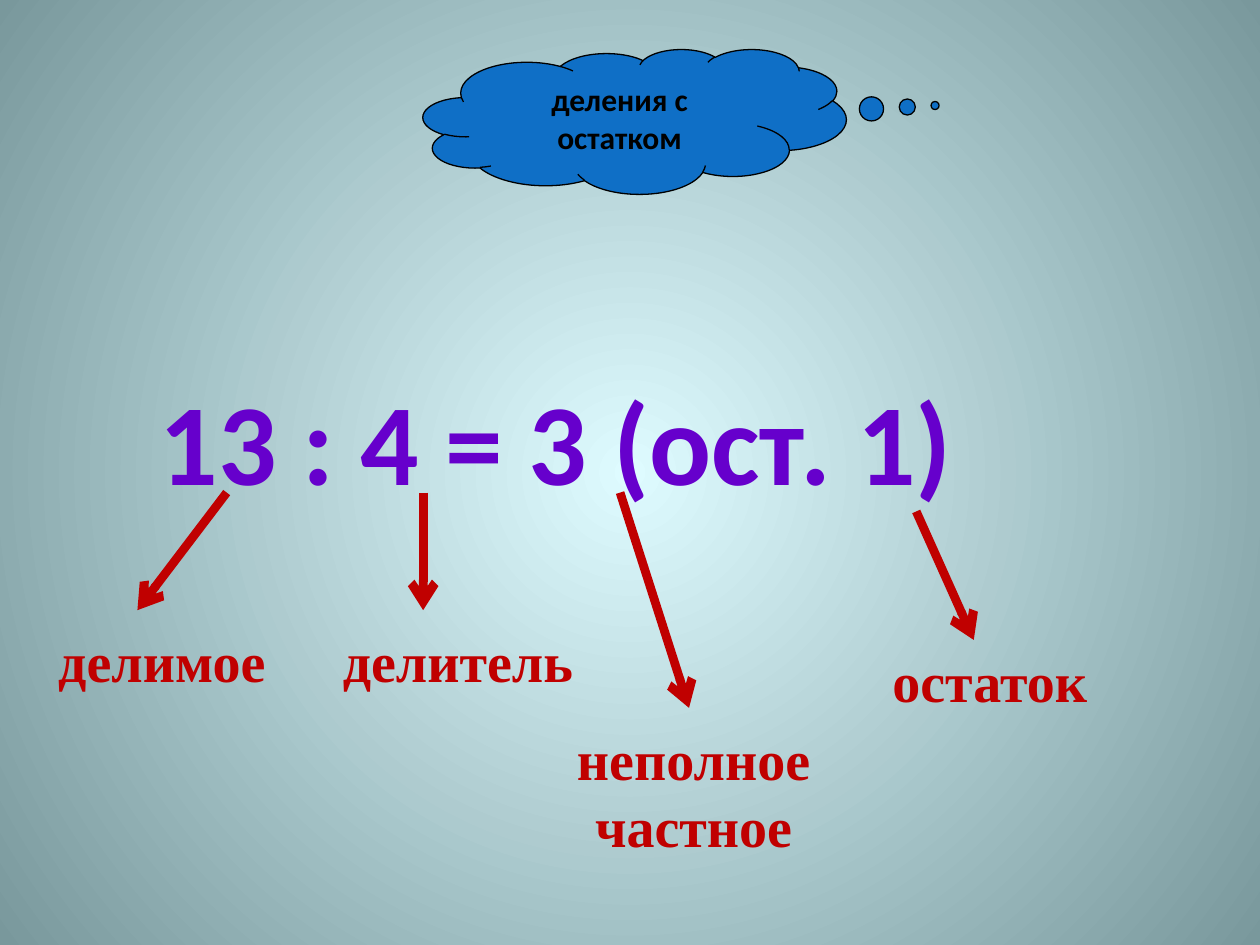
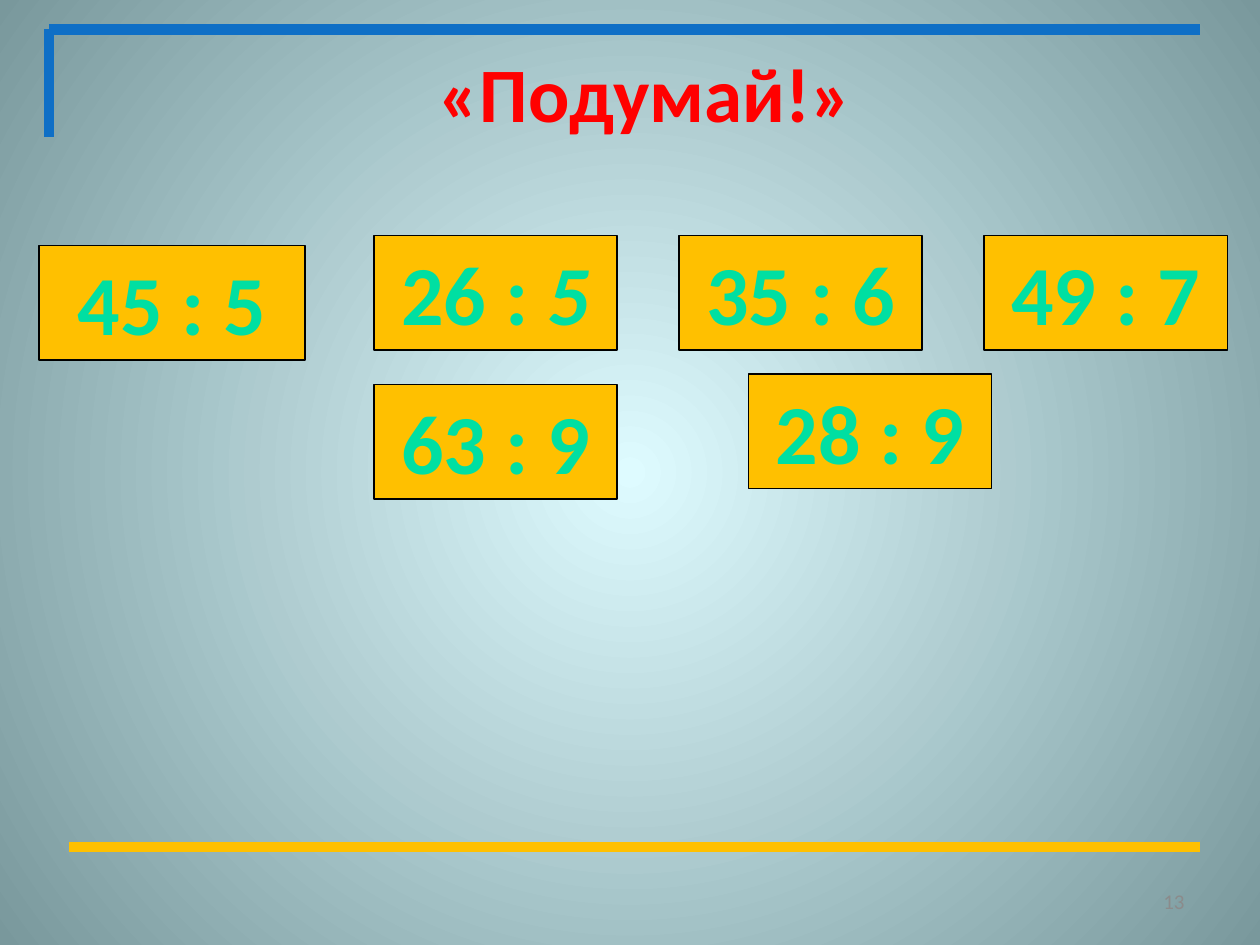
from dataclasses import dataclass
from typing import Any

from lxml import etree
from pptx import Presentation
from pptx.dml.color import RGBColor
from pptx.enum.shapes import MSO_CONNECTOR, MSO_SHAPE
from pptx.enum.text import MSO_ANCHOR, MSO_AUTO_SIZE, PP_ALIGN
from pptx.oxml import parse_xml
from pptx.oxml.ns import nsdecls, qn
from pptx.util import Cm, Pt

STRAIGHT = MSO_CONNECTOR.STRAIGHT
CLOUD = MSO_SHAPE.CLOUD_CALLOUT
RECTANGLE = MSO_SHAPE.RECTANGLE
LEFT, CENTER, RIGHT = PP_ALIGN.LEFT, PP_ALIGN.CENTER, PP_ALIGN.RIGHT
TOP, MIDDLE = MSO_ANCHOR.TOP, MSO_ANCHOR.MIDDLE
GROW, FIXED = MSO_AUTO_SIZE.SHAPE_TO_FIT_TEXT, MSO_AUTO_SIZE.NONE
TITLE_ONLY_LAYOUT, BLANK_LAYOUT = 5, 6


@dataclass(frozen=True)
class TextStyle:
    size: float
    color: str
    name: str = "Calibri"
    bold: bool = True


@dataclass(frozen=True)
class Theme:
    glow: str = "DEFBFF"
    edge: str = "79989C"
    blue: str = "0F6FC6"
    amber: str = "FFC000"
    red: str = "C00000"
    outline: str = "000000"
    outline_width: float = 0.75
    arrow_width: float = 5
    bar_width: float = 6
    digit_outline: str = "00A578"
    digit_outline_width: float = 0.71
    digit_stops: tuple[tuple[int, str], ...] = (
        (0, "006F51"), (43, "00DFA2"), (48, "00D097"), (100, "006F51"))
    formula: TextStyle = TextStyle(66, "6600CC")
    cloud: TextStyle = TextStyle(18, "000000")
    term: TextStyle = TextStyle(32, "C00000", "Times New Roman")
    title: TextStyle = TextStyle(44, "FF0000")
    digits: TextStyle = TextStyle(48, "00DFA2")
    number: TextStyle = TextStyle(12, "8B8B8B", bold=False)


@dataclass(frozen=True)
class Box:
    left: float
    top: float
    width: float
    height: float

    def lengths(self) -> tuple[Cm, Cm, Cm, Cm]:
        return Cm(self.left), Cm(self.top), Cm(self.width), Cm(self.height)


@dataclass(frozen=True)
class Line:
    start: tuple[float, float]
    end: tuple[float, float]
    color: str
    width: float
    arrow: bool = False


@dataclass(frozen=True)
class Term:
    text: str
    box: Box
    start: tuple[float, float]
    end: tuple[float, float]


@dataclass(frozen=True)
class Card:
    dividend: str
    divisor: str
    left: float
    top: float
    width: float = 4.9
    wrap: bool = False
    italic_divisor: bool = False


THEME = Theme()
CARD_HEIGHT = 2.31
ROW_LEFT, ROW_TOP, ROW_STEP = 7.54, 4.75, 6.15

TERMS = (
    Term("неполное частное", Box(10.11, 14.48, 7.75, 3), (12.5, 9.93), (13.89, 14.27)),
    Term("остаток", Box(17.48, 12.9, 4.95, 1.63), (18.47, 10.31), (19.63, 12.9)),
    Term("делимое", Box(0.79, 12.5, 4.95, 1.63), (4.57, 9.93), (2.77, 12.3)),
    Term("делитель", Box(6.35, 12.5, 5.77, 1.63), (8.53, 9.93), (8.53, 12.3)),
)
BARS = (
    Line((0.99, 0.59), (24.2, 0.59), THEME.blue, THEME.bar_width),
    Line((0.99, 0.59), (0.99, 2.77), THEME.blue, THEME.bar_width),
    Line((1.4, 17.07), (24.2, 17.07), THEME.amber, THEME.bar_width),
)
CARDS = (
    Card("45", "5", 0.79, 4.95, 5.36, wrap=True),
    Card("63", "9", ROW_LEFT, 7.75),
    Card("28", "9", 15.09, 7.54),
    Card("26", "5", ROW_LEFT, ROW_TOP, italic_divisor=True),
    Card("35", "6", ROW_LEFT + ROW_STEP, ROW_TOP),
    Card("49", "7", ROW_LEFT + 2 * ROW_STEP, ROW_TOP),
)


def apply_format(target: Any, values: dict[str, Any]) -> None:
    for name, value in values.items():
        setattr(target, name, value)


def style_font(font: Any, style: TextStyle) -> None:
    apply_format(font, {"name": style.name, "size": Pt(style.size), "bold": style.bold})
    font.color.rgb = RGBColor.from_string(style.color)


def write_text(shape: Any, text: str, style: TextStyle, alignment: Any = CENTER,
               anchor: Any = TOP, auto_size: Any = GROW) -> None:
    frame = shape.text_frame
    apply_format(frame, {"word_wrap": True, "auto_size": auto_size,
                         "vertical_anchor": anchor})
    paragraph = frame.paragraphs[0]
    paragraph.alignment = alignment
    run = paragraph.add_run()
    run.text = text
    style_font(run.font, style)


def add_text(slide: Any, text: str, box: Box, style: TextStyle, **options: Any) -> None:
    write_text(slide.shapes.add_textbox(*box.lengths()), text, style, **options)


def add_outlined_shape(slide: Any, kind: Any, box: Box, fill: str) -> Any:
    shape = slide.shapes.add_shape(kind, *box.lengths())
    shape.shadow.inherit = False
    shape.fill.solid()
    shape.fill.fore_color.rgb = RGBColor.from_string(fill)
    shape.line.color.rgb = RGBColor.from_string(THEME.outline)
    shape.line.width = Pt(THEME.outline_width)
    return shape


def add_line(slide: Any, line: Line) -> None:
    points = [Cm(value) for value in (*line.start, *line.end)]
    connector = slide.shapes.add_connector(STRAIGHT, *points)
    connector.line.color.rgb = RGBColor.from_string(line.color)
    connector.line.width = Pt(line.width)
    properties = connector.element.spPr
    if line.arrow:
        etree.SubElement(properties.find(qn("a:ln")), qn("a:tailEnd"), type="arrow")
    etree.SubElement(properties, qn("a:effectLst"))


def add_digit_effects(run: Any) -> None:
    properties = run.font._element if hasattr(run.font, "_element") else run._r.get_or_add_rPr()
    properties.remove(properties.find(qn("a:solidFill")))
    stops = "".join(f'<a:gs pos="{position * 1000}"><a:srgbClr val="{color}"/></a:gs>'
                    for position, color in THEME.digit_stops)
    outline = (f'<a:ln {nsdecls("a")} w="{Pt(THEME.digit_outline_width)}"><a:solidFill>'
               f'<a:srgbClr val="{THEME.digit_outline}"/></a:solidFill></a:ln>')
    gradient = (f'<a:gradFill {nsdecls("a")}><a:gsLst>{stops}</a:gsLst>'
                '<a:lin ang="5400000" scaled="0"/></a:gradFill>')
    for index, markup in enumerate((outline, gradient)):
        properties.insert(index, parse_xml(markup))


def add_card(slide: Any, card: Card) -> None:
    box = Box(card.left, card.top, card.width, CARD_HEIGHT)
    shape = add_outlined_shape(slide, RECTANGLE, box, THEME.amber)
    apply_format(shape.text_frame, {"word_wrap": card.wrap, "auto_size": GROW,
                                    "vertical_anchor": TOP})
    paragraph = shape.text_frame.paragraphs[0]
    paragraph.alignment = CENTER
    if card.italic_divisor:
        parts = ((f"{card.dividend} : ", False), (card.divisor, True))
    else:
        parts = ((f"{card.dividend} : {card.divisor}", False),)
    for text, italic in parts:
        run = paragraph.add_run()
        run.text = text
        style_font(run.font, THEME.digits)
        run.font.italic = italic
        add_digit_effects(run)


def set_background(master: Any) -> None:
    fill = master.background.fill
    fill.gradient()
    for stop, color in zip(fill.gradient_stops, (THEME.glow, THEME.edge)):
        stop.color.rgb = RGBColor.from_string(color)
    linear = master.element.find(".//" + qn("a:lin"))
    linear.getparent().replace(linear, parse_xml(
        f'<a:path {nsdecls("a")} path="circle">'
        '<a:fillToRect l="50000" t="50000" r="50000" b="50000"/></a:path>'))


def build_division_terms(presentation: Any) -> None:
    slide = presentation.slides.add_slide(presentation.slide_layouts[BLANK_LAYOUT])
    add_text(slide, "13 : 4 = 3 (ост. 1)", Box(2.97, 7.34, 19.69, 3.05),
             THEME.formula, alignment=LEFT)
    cloud = add_outlined_shape(slide, CLOUD, Box(8.53, 0.99, 8.53, 2.92), THEME.blue)
    cloud.adjustments[0] = 0.71
    cloud.adjustments[1] = -0.11
    write_text(cloud, "деления с остатком", THEME.cloud, anchor=MIDDLE, auto_size=FIXED)
    for term in TERMS:
        add_text(slide, term.text, term.box, THEME.term)
        add_line(slide, Line(term.start, term.end, THEME.red, THEME.arrow_width, True))


def build_think_task(presentation: Any) -> None:
    slide = presentation.slides.add_slide(presentation.slide_layouts[TITLE_ONLY_LAYOUT])
    for bar in BARS:
        add_line(slide, bar)
    title = slide.shapes.title
    apply_format(title, dict(zip(("left", "top", "width", "height"),
                                 Box(1.4, 0.79, 23.22, 2.13).lengths())))
    write_text(title, "«Подумай!»", THEME.title, anchor=MIDDLE, auto_size=FIXED)
    for card in CARDS:
        add_card(slide, card)
    add_text(slide, "13", Box(18.2, 17.66, 5.93, 1.01), THEME.number,
             alignment=RIGHT, anchor=MIDDLE, auto_size=FIXED)


def main() -> None:
    presentation = Presentation()
    presentation.slide_width = Cm(25.4)
    presentation.slide_height = Cm(19.05)
    set_background(presentation.slide_master)
    build_division_terms(presentation)
    build_think_task(presentation)
    presentation.save("out.pptx")


if __name__ == "__main__":
    main()
